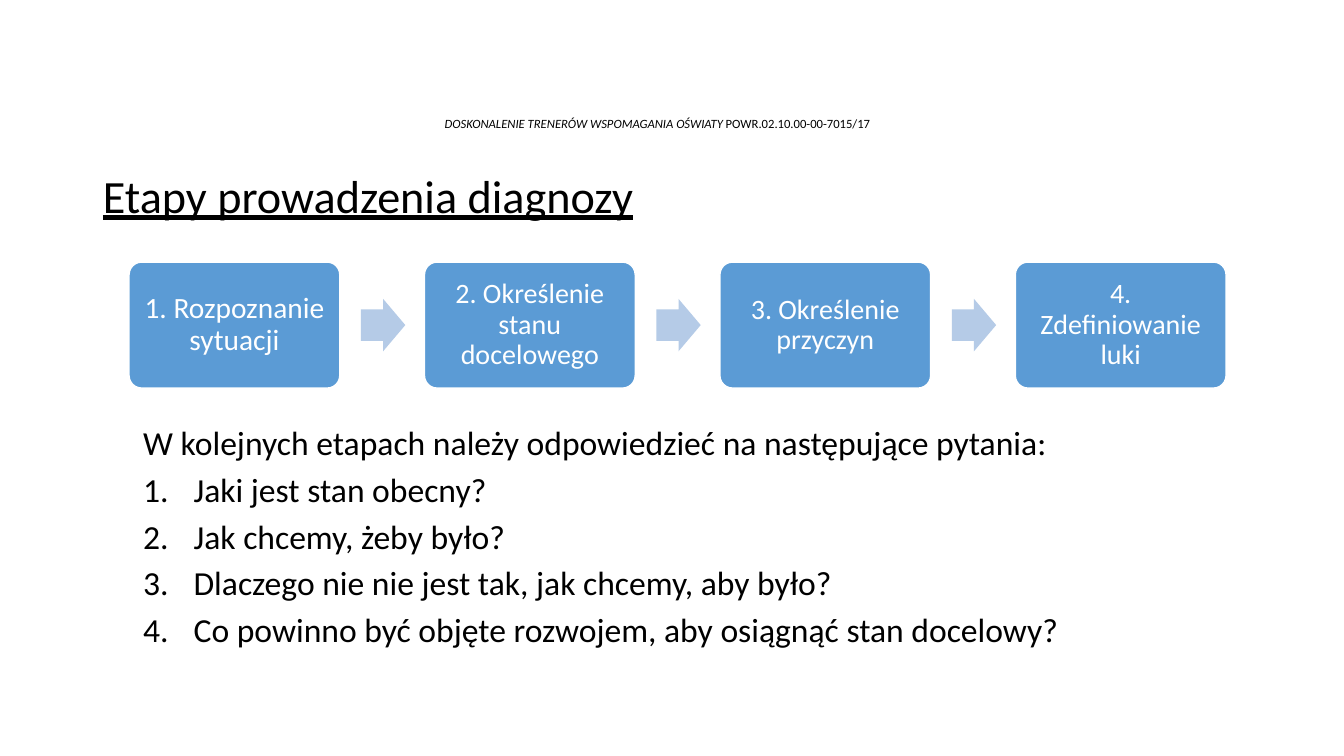
from dataclasses import dataclass

import pptx
import pptx.dml.color
import pptx.enum.shapes
import pptx.enum.text
import pptx.oxml.xmlchemy
import pptx.util
from lxml import etree
from pptx.util import Inches, Pt

RGB = pptx.dml.color.RGBColor
Align = pptx.enum.text.PP_ALIGN
Anchor = pptx.enum.text.MSO_ANCHOR
Shape = pptx.enum.shapes.MSO_SHAPE


@dataclass(frozen=True)
class Theme:
    font: str = "Calibri"
    text: RGB = RGB(0x00, 0x00, 0x00)
    box: RGB = RGB(0x5B, 0x9B, 0xD5)
    arrow: RGB = RGB(0xB5, 0xCB, 0xE7)
    white: RGB = RGB(0xFF, 0xFF, 0xFF)
    title_size: float = 33
    body_size: float = 24
    header_size: float = 9
    line_spacing: float = 0.9
    question_gap: float = 7.5


@dataclass(frozen=True)
class Step:
    label: str
    size: float
    inset: float


THEME = Theme()
STEPS = [
    Step("1. Rozpoznanie sytuacji", 21, 0.09),
    Step("2. Określenie stanu docelowego", 20, 0.08),
    Step("3. Określenie przyczyn", 20, 0.08),
    Step("4. Zdefiniowanie luki", 20, 0.08),
]
INTRO = "W kolejnych etapach należy odpowiedzieć na następujące pytania:"
QUESTIONS = [
    "Jaki jest stan obecny?",
    "Jak chcemy, żeby było?",
    "Dlaczego nie nie jest tak, jak chcemy, aby było?",
    "Co powinno być objęte rozwojem, aby osiągnąć stan docelowy?",
]
STEP_LEFT, STEP_TOP, STEP_PITCH = 1.28, 2.6, 2.93
STEP_WIDTH, STEP_HEIGHT = 2.09, 1.25
ARROW_OFFSET, ARROW_WIDTH, ARROW_HEIGHT = 2.3, 0.44, 0.52


def place(sp, left: float, top: float, width: float, height: float) -> None:
    sp.left, sp.top = Inches(left), Inches(top)
    sp.width, sp.height = Inches(width), Inches(height)


def add_run(p, text: str, size: float, color: RGB = THEME.text):
    r = p.add_run()
    r.text = text
    r.font.name = THEME.font
    r.font.size = Pt(size)
    r.font.color.rgb = color
    return r


def format_paragraph(p, align: Align) -> None:
    p.alignment = align
    p.line_spacing = THEME.line_spacing
    p.space_before = p.space_after = Pt(0)


def set_numbering(p, numbered: bool) -> None:
    pPr = p._p.get_or_add_pPr()
    indent = Inches(0.5) if numbered else 0
    pPr.set("marL", str(indent))
    pPr.set("indent", str(-indent))
    tag = "a:buAutoNum" if numbered else "a:buNone"
    bullet = etree.SubElement(pPr, pptx.oxml.ns.qn(tag))
    if numbered:
        bullet.set("type", "arabicPeriod")


def add_header(s) -> None:
    sp = s.shapes.add_textbox(Inches(0.79), Inches(1.12), Inches(11.46), Inches(0.25))
    tf = sp.text_frame
    tf.word_wrap = True
    p = tf.paragraphs[0]
    format_paragraph(p, Align.CENTER)
    r = add_run(p, "DOSKONALENIE TRENERÓW WSPOMAGANIA OŚWIATY ", THEME.header_size)
    r.font.italic = True
    add_run(p, "POWR.02.10.00-00-7015/17", THEME.header_size)


def fill_title(sp) -> None:
    place(sp, 0.92, 1.46, 11.5, 1.01)
    tf = sp.text_frame
    tf.auto_size = pptx.enum.text.MSO_AUTO_SIZE.NONE
    tf.vertical_anchor = Anchor.MIDDLE
    p = tf.paragraphs[0]
    format_paragraph(p, Align.LEFT)
    r = add_run(p, "Etapy prowadzenia diagnozy", THEME.title_size)
    r.font.underline = True


def fill_questions(sp) -> None:
    place(sp, 1.32, 4.18, 10.88, 2.59)
    tf = sp.text_frame
    tf.auto_size = pptx.enum.text.MSO_AUTO_SIZE.NONE
    for i, text in enumerate([INTRO, *QUESTIONS]):
        p = tf.add_paragraph() if i else tf.paragraphs[0]
        set_numbering(p, numbered=i > 0)
        format_paragraph(p, Align.LEFT)
        if i:
            p.space_before = Pt(THEME.question_gap)
        add_run(p, text, THEME.body_size)


def add_filled_shape(s, kind: Shape, box: tuple[float, ...], color: RGB):
    sp = s.shapes.add_shape(kind, *map(Inches, box))
    sp.shadow.inherit = False
    sp.fill.solid()
    sp.fill.fore_color.rgb = color
    sp.line.fill.background()
    return sp


def add_step(s, step: Step, left: float) -> None:
    box = (left, STEP_TOP, STEP_WIDTH, STEP_HEIGHT)
    sp = add_filled_shape(s, Shape.ROUNDED_RECTANGLE, box, THEME.box)
    sp.adjustments[0] = 0.1
    sp.line.color.rgb = THEME.white
    sp.line.width = Pt(1)
    tf = sp.text_frame
    tf.word_wrap = True
    tf.vertical_anchor = Anchor.MIDDLE
    tf.margin_left = tf.margin_right = Inches(step.inset)
    tf.margin_top = tf.margin_bottom = Inches(step.inset)
    p = tf.paragraphs[0]
    format_paragraph(p, Align.CENTER)
    add_run(p, step.label, step.size, THEME.white)


def add_arrow(s, left: float) -> None:
    top = STEP_TOP + (STEP_HEIGHT - ARROW_HEIGHT) / 2
    box = (left, top, ARROW_WIDTH, ARROW_HEIGHT)
    sp = add_filled_shape(s, Shape.RIGHT_ARROW, box, THEME.arrow)
    sp.adjustments[0] = 0.6
    sp.adjustments[1] = 0.5


def main() -> None:
    prs = pptx.Presentation()
    prs.slide_width, prs.slide_height = Inches(13.33), Inches(7.5)
    s = prs.slides.add_slide(prs.slide_layouts[1])
    add_header(s)
    fill_title(s.shapes.title)
    fill_questions(s.placeholders[1])
    for i, step in enumerate(STEPS):
        left = STEP_LEFT + i * STEP_PITCH
        add_step(s, step, left)
        if i < len(STEPS) - 1:
            add_arrow(s, left + ARROW_OFFSET)
    prs.save("out.pptx")


if __name__ == "__main__":
    main()
